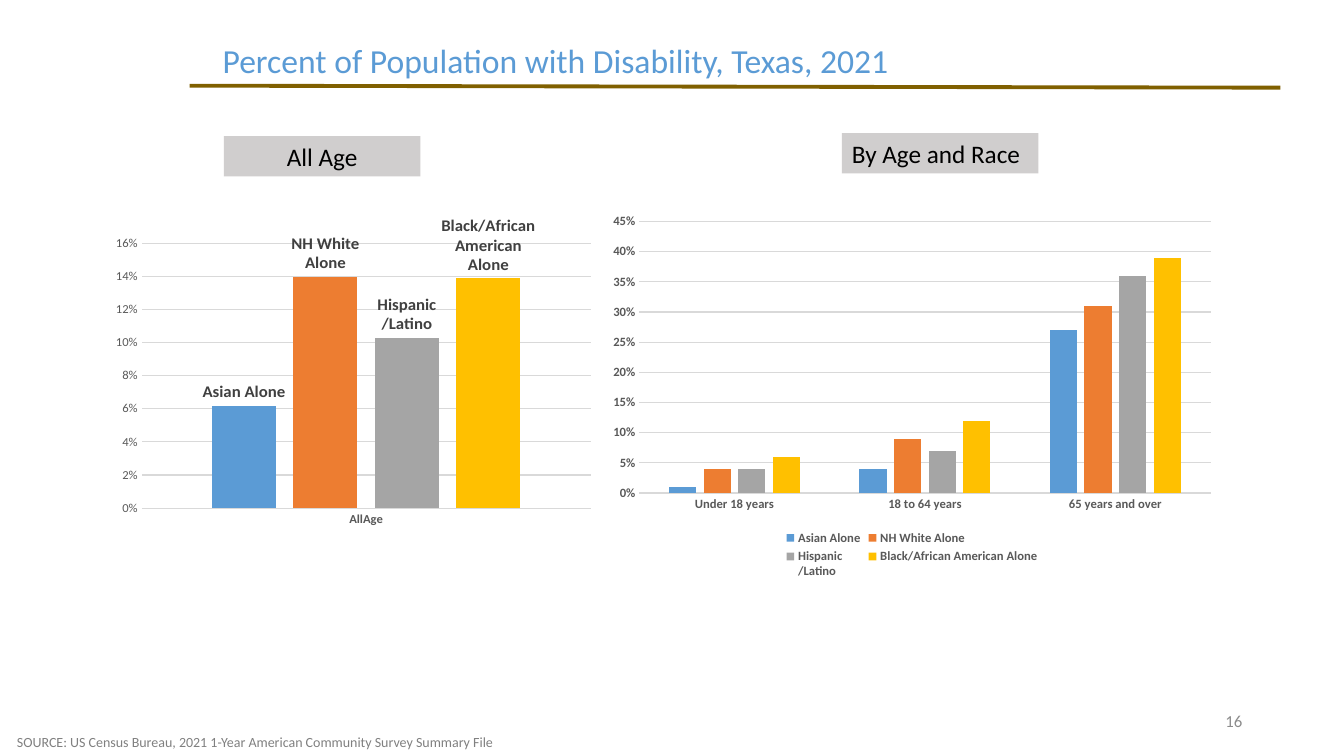
"""Build a slide of two column charts on disability in Texas."""
from dataclasses import dataclass

from lxml import etree
from pptx import Presentation
from pptx import util as u
from pptx.chart import data as cd
from pptx.dml import color as col
from pptx.enum import chart as ch
from pptx.enum import shapes as sh
from pptx.enum import text as tx
from pptx.oxml import ns

FONT = "Calibri"
BLACK = col.RGBColor(0x00, 0x00, 0x00)
BLUE = col.RGBColor(0x5B, 0x9B, 0xD5)
ORANGE = col.RGBColor(0xED, 0x7D, 0x31)
GRAY = col.RGBColor(0xA5, 0xA5, 0xA5)
GOLD = col.RGBColor(0xFF, 0xC0, 0x00)
BROWN = col.RGBColor(0x80, 0x60, 0x00)
PANEL = col.RGBColor(0xD0, 0xCE, 0xCE)
GRID = col.RGBColor(0xD9, 0xD9, 0xD9)
AXIS_TEXT = col.RGBColor(0x59, 0x59, 0x59)
LABEL_TEXT = col.RGBColor(0x40, 0x40, 0x40)
SOURCE_TEXT = col.RGBColor(0x80, 0x80, 0x80)
NUMBER_TEXT = col.RGBColor(0x8C, 0x8C, 0x8C)

Frame = tuple[float, float, float, float]


@dataclass(frozen=True)
class Group:
    name: str
    color: col.RGBColor
    all_age: float
    by_age: tuple[float, float, float]


@dataclass(frozen=True)
class Panel:
    frame: Frame
    categories: tuple[str, ...]
    values: tuple[tuple[float, ...], ...]
    top: float
    step: float
    bold_scale: bool = False
    legend: bool = False
    labels: bool = False
    plot: Frame | None = None


GROUPS = (
    Group("Asian Alone", BLUE, 0.062, (0.01, 0.04, 0.27)),
    Group("NH White Alone", ORANGE, 0.14, (0.04, 0.09, 0.31)),
    Group("Hispanic\n/Latino", GRAY, 0.103, (0.04, 0.07, 0.36)),
    Group("Black/African American Alone", GOLD, 0.139, (0.06, 0.12, 0.39)),
)
PANELS = (
    Panel((5.96, 2.05, 6.17, 3.73),
          ("Under 18 years", "18 to 64 years", "65 years and over"),
          tuple(group.by_age for group in GROUPS), 0.45, 0.05,
          bold_scale=True, legend=True),
    Panel((0.9, 2.15, 5.06, 3.2), ("AllAge",),
          tuple((group.all_age,) for group in GROUPS), 0.16, 0.02,
          labels=True, plot=(0.1, 0.05, 0.88, 0.85)),
)


def inches(frame: Frame) -> list[u.Length]:
    return [u.Inches(side) for side in frame]


def set_font(font, size: float, color: col.RGBColor, bold: bool = False) -> None:
    font.name, font.size, font.bold = FONT, u.Pt(size), bold
    font.color.rgb = color


def add_text(page, words: str, *, frame: Frame, size: float, color: col.RGBColor,
             fill: col.RGBColor | None = None, wrap: bool = True,
             align=tx.PP_ALIGN.LEFT, anchor=tx.MSO_ANCHOR.TOP,
             spacing: float = 1.0) -> None:
    if fill is None:
        box = page.shapes.add_textbox(*inches(frame))
    else:
        box = page.shapes.add_shape(sh.MSO_SHAPE.RECTANGLE, *inches(frame))
        box.shadow.inherit = False
        box.fill.solid()
        box.fill.fore_color.rgb = fill
        box.line.fill.background()
    box.text_frame.word_wrap = wrap
    box.text_frame.vertical_anchor = anchor
    para = box.text_frame.paragraphs[0]
    para.alignment, para.line_spacing = align, spacing
    span = para.add_run()
    span.text = words
    set_font(span.font, size, color)


def add_rule(page) -> None:
    rule = page.shapes.add_connector(
        sh.MSO_CONNECTOR.STRAIGHT, *inches((1.88, 0.85, 12.7, 0.87)))
    rule.line.color.rgb = BROWN
    rule.line.width = u.Pt(2.75)
    etree.SubElement(rule._element.spPr, ns.qn("a:effectLst"))


def set_plot_area(chart, plot: Frame) -> None:
    area = chart._chartSpace.chart.plotArea
    for old in area.findall(ns.qn("c:layout")):
        area.remove(old)
    layout = etree.Element(ns.qn("c:layout"))
    manual = etree.SubElement(layout, ns.qn("c:manualLayout"))
    settings = [("layoutTarget", "inner"), ("xMode", "edge"), ("yMode", "edge")]
    settings += zip("xywh", map(str, plot))
    for tag, value in settings:
        etree.SubElement(manual, ns.qn(f"c:{tag}")).set("val", value)
    area.insert(0, layout)


def style_axes(chart, panel: Panel) -> None:
    across, scale = chart.category_axis, chart.value_axis
    for axis, bold in ((across, True), (scale, panel.bold_scale)):
        axis.major_tick_mark = axis.minor_tick_mark = ch.XL_TICK_MARK.NONE
        set_font(axis.tick_labels.font, 9, AXIS_TEXT, bold)
    scale.minimum_scale, scale.maximum_scale = 0, panel.top
    scale.major_unit = panel.step
    scale.tick_labels.number_format = "0%"
    scale.tick_labels.number_format_is_linked = False
    scale.format.line.fill.background()
    scale.has_major_gridlines = True
    for line in (across.format.line, scale.major_gridlines.format.line):
        line.color.rgb = GRID
        line.width = u.Pt(0.75)


def add_panel(page, panel: Panel) -> None:
    table = cd.CategoryChartData(number_format="0%")
    table.categories = panel.categories
    for group, values in zip(GROUPS, panel.values):
        table.add_series(group.name, values)
    chart = page.shapes.add_chart(
        ch.XL_CHART_TYPE.COLUMN_CLUSTERED, *inches(panel.frame), table).chart
    set_font(chart.font, 10, BLACK)
    chart.has_title = False
    chart.has_legend = panel.legend
    if panel.legend:
        chart.legend.position = ch.XL_LEGEND_POSITION.BOTTOM
        chart.legend.include_in_layout = False
        set_font(chart.legend.font, 9, AXIS_TEXT, True)
    style_axes(chart, panel)
    bars = chart.plots[0]
    bars.gap_width, bars.overlap, bars.vary_by_categories = 219, -27, False
    for group, series in zip(GROUPS, bars.series):
        series.format.fill.solid()
        series.format.fill.fore_color.rgb = group.color
        if panel.labels:
            labels = series.data_labels
            labels.show_series_name, labels.show_value = True, False
            labels.position = ch.XL_LABEL_POSITION.OUTSIDE_END
            set_font(labels.font, 12, LABEL_TEXT, True)
    if panel.plot:
        set_plot_area(chart, panel.plot)


def main() -> None:
    deck = Presentation()
    deck.slide_width, deck.slide_height = u.Inches(13.33), u.Inches(7.5)
    page = deck.slides.add_slide(deck.slide_layouts[6])
    add_rule(page)
    add_text(page, "16", frame=(9.42, 6.95, 3, 0.4), size=12, color=NUMBER_TEXT,
             align=tx.PP_ALIGN.RIGHT, anchor=tx.MSO_ANCHOR.MIDDLE)
    add_text(page, "Percent of Population with Disability, Texas, 2021",
             frame=(2.11, 0.39, 6.87, 0.46), size=24, color=BLUE,
             wrap=False, spacing=0.9)
    add_text(page, "SOURCE: US Census Bureau, 2021 1-Year American Community "
             "Survey Summary File", frame=(0.07, 7.23, 5.08, 0.27), size=10,
             color=SOURCE_TEXT, wrap=False)
    for panel in PANELS:
        add_panel(page, panel)
    add_text(page, "All Age", frame=(2.22, 1.35, 1.95, 0.4), size=18,
             color=BLACK, fill=PANEL, align=tx.PP_ALIGN.CENTER)
    add_text(page, "By Age and Race", frame=(8.35, 1.32, 1.95, 0.4), size=18,
             color=BLACK, fill=PANEL)
    deck.save("out.pptx")


if __name__ == "__main__":
    main()
